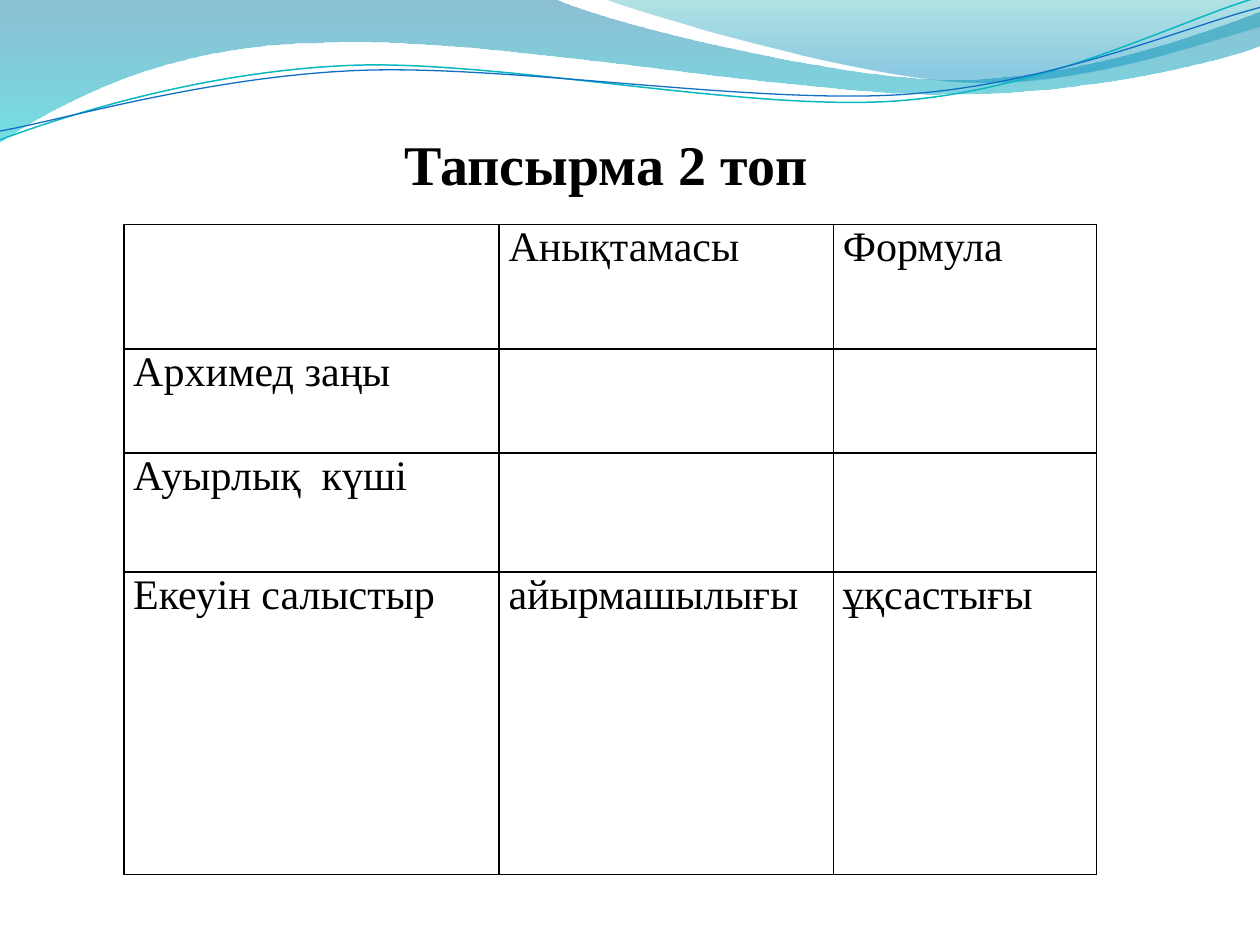
import math
from typing import NamedTuple

from lxml import etree
from pptx import Presentation
from pptx import util as u
from pptx.dml.color import RGBColor
from pptx.enum import text
from pptx.oxml import ns

Pt = u.Pt
Point = tuple[float, float]

BLACK = RGBColor(0x00, 0x00, 0x00)
DEEP_BLUE = RGBColor(0x00, 0x74, 0xA1)
AQUA = RGBColor(0x00, 0xC6, 0xCF)
TEAL = RGBColor(0x00, 0xA1, 0xA9)
SKY_BLUE = RGBColor(0x00, 0x8B, 0xBF)
LINE_TEAL = RGBColor(0x0A, 0xB8, 0xBF)
LINE_BLUE = RGBColor(0x0F, 0x6F, 0xC6)
FONT = "Times New Roman"
STRAND_TILT = -2.7  # degrees


class Stop(NamedTuple):
    position: float
    color: RGBColor
    opacity: int  # percent


class Wave(NamedTuple):
    # Each run is a point followed by three points per Bézier curve
    runs: list[list[Point]]
    stops: tuple[Stop, Stop]


class Strand(NamedTuple):
    run: list[Point]
    center: Point
    color: RGBColor
    width: float


WAVES = [
    Wave(
        [
            [(0, -0.7)],
            [(316.8, -0.7), (342.7, 12.2), (478.1, 45.4), (545.8, 45.4),
             (614.2, 45.4), (689.8, 18.7), (720, 6.5)],
            [(720.7, 25.9), (707.8, 31.7), (626.4, 54.7), (537.1, 54),
             (447.8, 54), (275, 20.2), (185, 24.5),
             (92.9, 25.2), (33.1, 59.8), (-0.7, 81.4)],
        ],
        (Stop(0, DEEP_BLUE, 45), Stop(1, AQUA, 55)),
    ),
    Wave(
        [
            [(344.9, -0.7), (366.5, 7.9), (491, 44.6), (553.7, 46.8),
             (616.3, 49.7), (691.9, 23), (720, 15.1)],
            [(720, 0)],
        ],
        (Stop(0, TEAL, 30), Stop(0.8, SKY_BLUE, 45)),
    ),
]
STRANDS = [
    Strand([(0, 79.9), (34.6, 67), (113.8, 41), (199.4, 37.4),
            (284.4, 33.8), (427, 64.1), (513.4, 57.6),
            (599.8, 51.1), (675.4, 10.8), (718.6, -1.4)],
           (359.3, 41.4), LINE_TEAL, 0.85),
    Strand([(0, 74.9), (33.8, 69.1), (118.1, 43.9), (203.8, 40.3),
            (290.2, 36.7), (429.8, 59.8), (516.2, 54),
            (601.9, 48.2), (677.5, 15.1), (720, 4.3)],
           (359.7, 42.5), LINE_BLUE, 0.75),
]

COLUMN_WIDTHS = [214.5, 191, 150.3]
ROW_HEIGHTS = [71.1, 59.6, 68.1, 172.7]
ROWS = [
    ["", "Анықтамасы", "Формула"],
    ["Архимед заңы", "", ""],
    ["Ауырлық  күші", "", ""],
    ["Екеуін салыстыр", "айырмашылығы", "ұқсастығы"],
]


def add_outline(slide, runs: list[list[Point]], closed: bool):
    """Build the outline, then join every three segments within a run into a curve."""
    places = [(Pt(x), Pt(y)) for run in runs for x, y in run]
    builder = slide.shapes.build_freeform(*places[0], scale=1.0)
    builder.add_line_segments(places[1:], close=closed)
    shape = builder.convert_to_shape()
    shape.shadow.inherit = False
    segments = list(shape._element.spPr.iter(ns.qn("a:moveTo"), ns.qn("a:lnTo")))
    first = 0
    for run in runs:
        for start in range(first + 1, first + len(run), 3):
            curve = etree.Element(ns.qn("a:cubicBezTo"))
            segments[start].addprevious(curve)
            for segment in segments[start:start + 3]:
                curve.append(segment[0])
                segment.getparent().remove(segment)
        first += len(run)
    return shape


def turn(point: Point, center: Point, degrees: float) -> Point:
    cosine, sine = math.cos(math.radians(degrees)), math.sin(math.radians(degrees))
    x, y = point[0] - center[0], point[1] - center[1]
    return center[0] + x * cosine - y * sine, center[1] + x * sine + y * cosine


def add_wave(slide, wave: Wave) -> None:
    shape = add_outline(slide, wave.runs, closed=True)
    shape.line.fill.background()
    shape.fill.gradient()
    shape.fill.gradient_angle = 270
    for target, stop in zip(shape.fill.gradient_stops, wave.stops):
        target.position = stop.position
        target.color.rgb = stop.color
    colors = shape._element.spPr.findall(".//" + ns.qn("a:gs") + "/" + ns.qn("a:srgbClr"))
    for color, stop in zip(colors, wave.stops):
        etree.SubElement(color, ns.qn("a:alpha"), val=str(stop.opacity * 1000))


def add_strand(slide, strand: Strand) -> None:
    level = [turn(point, strand.center, -STRAND_TILT) for point in strand.run]
    shape = add_outline(slide, [level], closed=False)
    shape.rotation = STRAND_TILT
    shape.fill.background()
    shape.line.color.rgb = strand.color
    shape.line.width = Pt(strand.width)


def set_font(paragraph, size: float, bold: bool = False) -> None:
    font = paragraph.font
    font.name, font.size, font.bold = FONT, Pt(size), bold
    font.color.rgb = BLACK


def add_title(slide, wording: str) -> None:
    shape = slide.shapes.add_textbox(Pt(224), Pt(71.3), Pt(247.7), Pt(67.7))
    frame = shape.text_frame
    frame.word_wrap = False
    frame.vertical_anchor = text.MSO_ANCHOR.MIDDLE
    frame.margin_bottom = Pt(27)
    paragraph = frame.paragraphs[0]
    paragraph.text = wording
    set_font(paragraph, 32, bold=True)


def add_borders(cell) -> None:
    properties = cell._tc.get_or_add_tcPr()
    for side in ("lnL", "lnR", "lnT", "lnB"):
        line = etree.SubElement(properties, ns.qn("a:" + side), w=str(Pt(1)))
        fill = etree.SubElement(line, ns.qn("a:solidFill"))
        etree.SubElement(fill, ns.qn("a:srgbClr"), val=str(BLACK))


def add_comparison_table(slide) -> None:
    table = slide.shapes.add_table(
        len(ROWS), len(COLUMN_WIDTHS), Pt(70.75), Pt(128.2),
        Pt(sum(COLUMN_WIDTHS)), Pt(sum(ROW_HEIGHTS))).table
    table.first_row = table.horz_banding = False
    for column, width in zip(table.columns, COLUMN_WIDTHS):
        column.width = Pt(width)
    for row, height, wordings in zip(table.rows, ROW_HEIGHTS, ROWS):
        row.height = Pt(height)
        for cell, wording in zip(row.cells, wordings):
            add_borders(cell)
            cell.fill.background()
            if wording:
                cell.margin_left = cell.margin_right = Pt(5.4)
                cell.margin_top = cell.margin_bottom = Pt(0)
                cell.text = wording
                set_font(cell.text_frame.paragraphs[0], 24)


def main() -> None:
    presentation = Presentation()
    presentation.slide_width, presentation.slide_height = Pt(720), Pt(540)
    slide = presentation.slides.add_slide(presentation.slide_layouts[6])

    # Decorative waves along the top
    for wave in WAVES:
        add_wave(slide, wave)
    for strand in STRANDS:
        add_strand(slide, strand)

    # Task heading and table
    add_title(slide, "Тапсырма 2 топ")
    add_comparison_table(slide)

    presentation.save("out.pptx")


if __name__ == "__main__":
    main()
